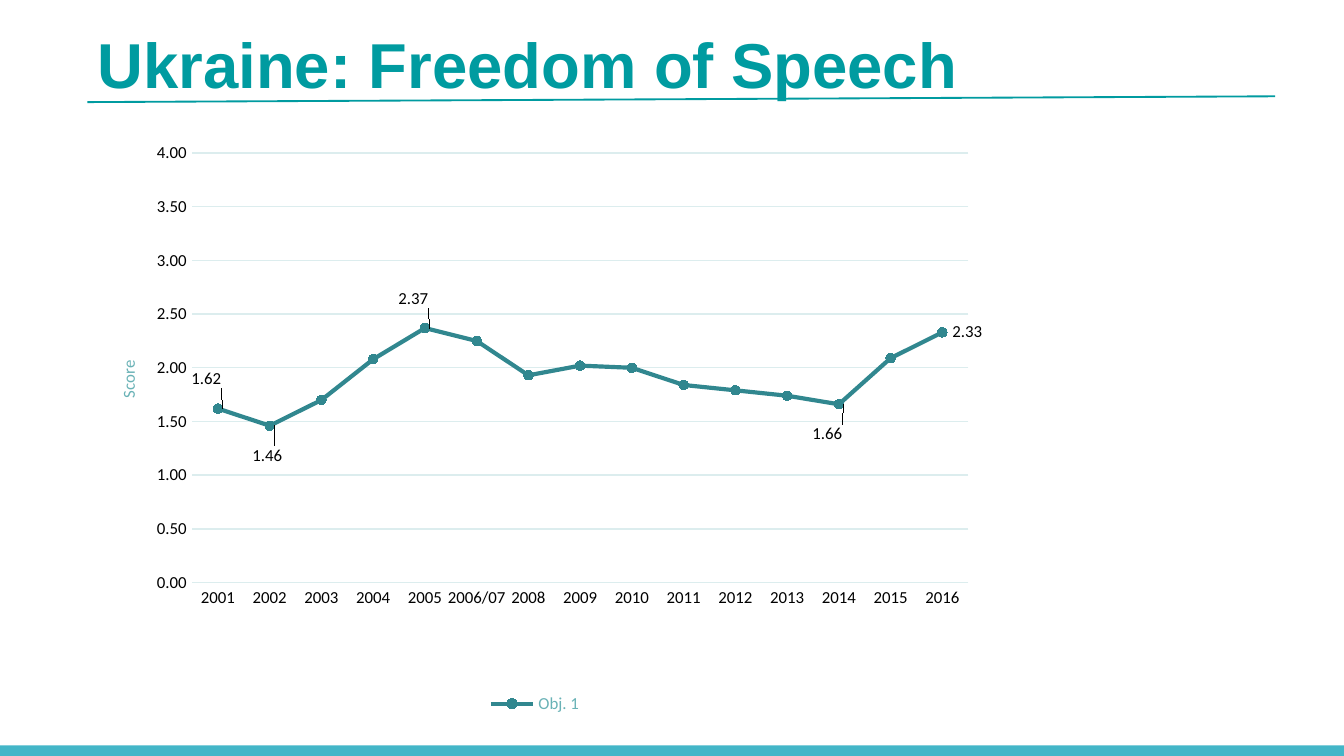
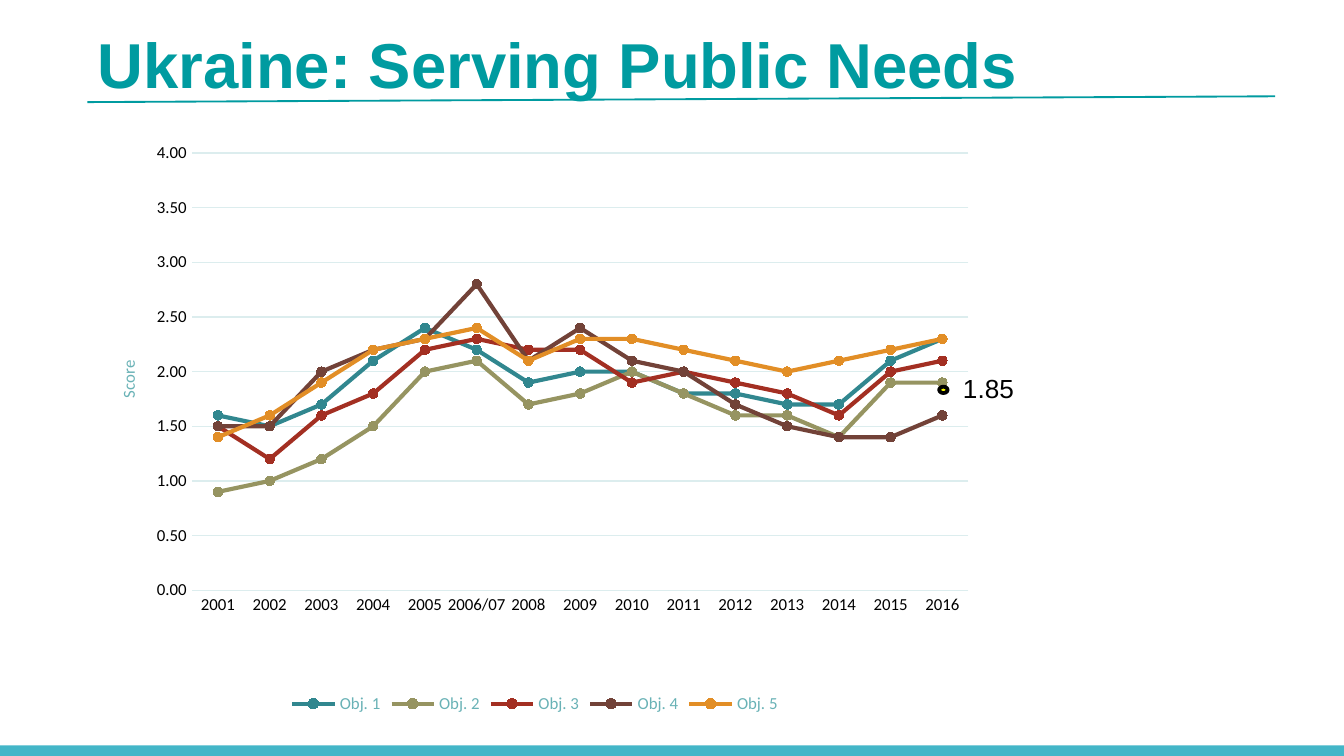
from lxml import etree
from pptx import Presentation
from pptx.chart.data import CategoryChartData
from pptx.dml.color import RGBColor
from pptx.enum.chart import (XL_CHART_TYPE, XL_LABEL_POSITION, XL_LEGEND_POSITION,
                             XL_MARKER_STYLE, XL_TICK_MARK)
from pptx.enum.shapes import MSO_CONNECTOR, MSO_SHAPE
from pptx.enum.text import MSO_ANCHOR
from pptx.oxml import parse_xml
from pptx.oxml.ns import nsdecls, qn
from pptx.util import Cm, Pt

LINE_MARKERS = XL_CHART_TYPE.LINE_MARKERS
LABEL_RIGHT = XL_LABEL_POSITION.RIGHT
LEGEND_BOTTOM = XL_LEGEND_POSITION.BOTTOM
CIRCLE = XL_MARKER_STYLE.CIRCLE
NO_TICK = XL_TICK_MARK.NONE
STRAIGHT = MSO_CONNECTOR.STRAIGHT
RECTANGLE, OVAL = MSO_SHAPE.RECTANGLE, MSO_SHAPE.OVAL
MIDDLE = MSO_ANCHOR.MIDDLE

TEAL = RGBColor(0x00, 0x9B, 0xA0)
BAND = RGBColor(0x43, 0xB6, 0xC8)
GRID = RGBColor(0xDC, 0xED, 0xEE)
CHART_TEXT = RGBColor(0x37, 0x6D, 0x70)
PALE_TEAL = RGBColor(0x69, 0xB2, 0xB6)
BLACK = RGBColor(0x00, 0x00, 0x00)
YELLOW = RGBColor(0xFF, 0xFF, 0x00)
SERIES_COLORS = [
    RGBColor(0x31, 0x87, 0x8F),
    RGBColor(0x96, 0x94, 0x61),
    RGBColor(0xA3, 0x2F, 0x22),
    RGBColor(0x72, 0x42, 0x38),
    RGBColor(0xE2, 0x8E, 0x26),
]

SLIDE_W, SLIDE_H = 25.4, 14.29
HEADER_BOX = (1.6, 0, 22.43, 2.39)
CHART_BOX = (1.47, 2.39, 17.28, 11.2)
AVERAGE_BOX = (17.7, 6.91, 2.34, 0.86)

YEARS = ["2001", "2002", "2003", "2004", "2005", "2006/07", "2008", "2009",
         "2010", "2011", "2012", "2013", "2014", "2015", "2016"]
FREE_SPEECH = [
    [1.62, 1.46, 1.7, 2.08, 2.37, 2.25, 1.93, 2.02, 2, 1.84, 1.79, 1.74, 1.66, 2.09, 2.33],
]
PUBLIC_NEEDS = [
    [1.6, 1.5, 1.7, 2.1, 2.4, 2.2, 1.9, 2, 2, 1.8, 1.8, 1.7, 1.7, 2.1, 2.3],
    [0.9, 1, 1.2, 1.5, 2, 2.1, 1.7, 1.8, 2, 1.8, 1.6, 1.6, 1.4, 1.9, 1.9],
    [1.5, 1.2, 1.6, 1.8, 2.2, 2.3, 2.2, 2.2, 1.9, 2, 1.9, 1.8, 1.6, 2, 2.1],
    [1.5, 1.5, 2, 2.2, 2.3, 2.8, 2.1, 2.4, 2.1, 2, 1.7, 1.5, 1.4, 1.4, 1.6],
    [1.4, 1.6, 1.9, 2.2, 2.3, 2.4, 2.1, 2.3, 2.3, 2.2, 2.1, 2, 2.1, 2.2, 2.3],
]
# Labelled years of the single series, with the shift of each label
LABEL_SHIFTS = {0: (-0.04, -0.05), 1: (-0.03, 0.05), 4: (-0.04, -0.05), 12: (-0.04, 0.05)}


def set_font(font, size, color, name="Calibri", bold=False):
    font.size, font.name, font.bold = Pt(size), name, bold
    font.color.rgb = color


def layout_xml(x, y, size=None, target=None):
    """Manual chart layout in fractions of the chart area."""
    parts = [("layoutTarget", target)] if target else []
    if target or not size:
        modes = [("xMode", "edge"), ("yMode", "edge")] if target else []
        parts += modes
    parts += [("x", x), ("y", y)]
    if size:
        parts += [("w", size[0]), ("h", size[1])]
    body = "".join(f'<c:{tag} val="{value}"/>' for tag, value in parts)
    return parse_xml(f'<c:layout {nsdecls("c")}><c:manualLayout>{body}'
                     '</c:manualLayout></c:layout>')


def replace_layout(parent, layout, index):
    for old in parent.findall(qn("c:layout")):
        parent.remove(old)
    parent.insert(index, layout)


def add_header(slide, box, title):
    left, top, width, height = box
    # Slightly rising rule under the title
    rule = slide.shapes.add_connector(
        STRAIGHT, Cm(left + 0.05), Cm(top + 1.93), Cm(left + 22.5), Cm(top + 1.82))
    rule.line.color.rgb = TEAL
    rule.line.width = Pt(1)
    etree.SubElement(rule._element.spPr, qn("a:effectLst"))

    heading = slide.shapes.add_textbox(Cm(left), Cm(top), Cm(width), Cm(height))
    frame = heading.text_frame
    frame.word_wrap = True
    frame.vertical_anchor = MIDDLE
    frame.text = title
    set_font(frame.paragraphs[0].font, 34, TEAL, "Arial", True)


def add_footer_band(slide):
    height = 0.23
    band = slide.shapes.add_shape(
        RECTANGLE, 0, Cm(SLIDE_H - height + 0.03), Cm(SLIDE_W), Cm(height - 0.03))
    band.shadow.inherit = False
    band.fill.solid()
    band.fill.fore_color.rgb = BAND
    band.line.fill.background()


def style_axes(chart):
    years, scores = chart.category_axis, chart.value_axis
    for axis in (years, scores):
        axis.major_tick_mark = axis.minor_tick_mark = NO_TICK
        set_font(axis.tick_labels.font, 9, BLACK)
    years.has_major_gridlines = False
    scores.has_major_gridlines = True
    for line in (years.format.line, scores.major_gridlines.format.line):
        line.color.rgb = GRID
        line.width = Pt(0.75)
    scores.format.line.fill.background()
    scores.minimum_scale, scores.maximum_scale, scores.major_unit = 0, 4, 0.5
    scores.tick_labels.number_format = "0.00"
    scores.tick_labels.number_format_is_linked = False

    # Axis title, set in from the chart's edge
    frame = scores.axis_title.text_frame
    frame.text = "Score"
    set_font(frame.paragraphs[0].font, 9, PALE_TEAL)
    title = scores.axis_title._element
    layout = layout_xml(0.04, 0.39)
    manual = layout[0]
    for tag in ("yMode", "xMode"):
        if manual.find(qn(f"c:{tag}")) is None:
            mode = parse_xml(f'<c:{tag} {nsdecls("c")} val="edge"/>')
            manual.insert(0, mode)
    replace_layout(title, layout, 1)


def label_key_years(series):
    labels = series.data_labels
    labels.show_value = True
    labels.position = LABEL_RIGHT
    labels.number_format = "0.00"
    labels.number_format_is_linked = False
    set_font(labels.font, 9, BLACK)
    entries = labels._element
    # Every year but the last has its own entry: shifted or hidden
    for index in range(len(YEARS) - 1):
        if index in LABEL_SHIFTS:
            label = series.points[index].data_label
            set_font(label.font, 9, BLACK)
            label.position = LABEL_RIGHT
            replace_layout(entries[index], layout_xml(*LABEL_SHIFTS[index]), 1)
        else:
            entries.insert(index, parse_xml(
                f'<c:dLbl {nsdecls("c")}><c:idx val="{index}"/><c:delete val="1"/></c:dLbl>'))


def add_score_chart(slide, box, scores, plot_height):
    data = CategoryChartData(number_format="0.00")
    data.categories = YEARS
    for number, values in enumerate(scores, 1):
        data.add_series(f"Obj. {number}", values)
    chart = slide.shapes.add_chart(LINE_MARKERS, *map(Cm, box), data).chart
    set_font(chart.font, 10, CHART_TEXT)
    chart.has_title = False
    chart.has_legend = True
    chart.legend.position = LEGEND_BOTTOM
    chart.legend.include_in_layout = False
    set_font(chart.legend.font, 9, PALE_TEAL)
    style_axes(chart)

    plot = chart.plots[0]
    plot.vary_by_categories = False
    for series, color in zip(plot.series, SERIES_COLORS):
        series.smooth = False
        series.format.line.color.rgb = color
        series.format.line.width = Pt(2.25)
        marker = series.marker
        marker.style, marker.size = CIRCLE, 5
        marker.format.fill.solid()
        marker.format.fill.fore_color.rgb = color
        marker.format.line.color.rgb = color

    plot_area = chart._chartSpace.chart.plotArea
    replace_layout(plot_area, layout_xml(0.125, 0.045, (0.849, plot_height), "inner"), 0)
    return chart


def add_average(slide, box):
    left, top, width, height = box
    average = slide.shapes.add_textbox(*map(Cm, box))
    frame = average.text_frame
    frame.word_wrap = True
    frame.margin_left = Cm(0.5)
    frame.text = "1.85"
    set_font(frame.paragraphs[0].font, 14, BLACK, "Arial")

    dot = slide.shapes.add_shape(OVAL, Cm(left + 0.05), Cm(top + 0.4), Cm(0.16), Cm(0.12))
    dot.shadow.inherit = False
    dot.fill.solid()
    dot.fill.fore_color.rgb = YELLOW
    dot.line.color.rgb = BLACK
    dot.line.width = Pt(2)


def add_score_slide(deck, title, scores, plot_height):
    slide = deck.slides.add_slide(deck.slide_layouts[6])
    add_footer_band(slide)
    add_header(slide, HEADER_BOX, title)
    return slide, add_score_chart(slide, CHART_BOX, scores, plot_height)


def main():
    deck = Presentation()
    deck.slide_width, deck.slide_height = Cm(SLIDE_W), Cm(SLIDE_H)

    _, speech_chart = add_score_slide(deck, "Ukraine: Freedom of Speech", FREE_SPEECH, 0.725)
    label_key_years(speech_chart.plots[0].series[0])

    needs_slide, _ = add_score_slide(
        deck, "Ukraine: Serving Public Needs", PUBLIC_NEEDS, 0.738)
    add_average(needs_slide, AVERAGE_BOX)

    deck.save("out.pptx")


if __name__ == "__main__":
    main()
